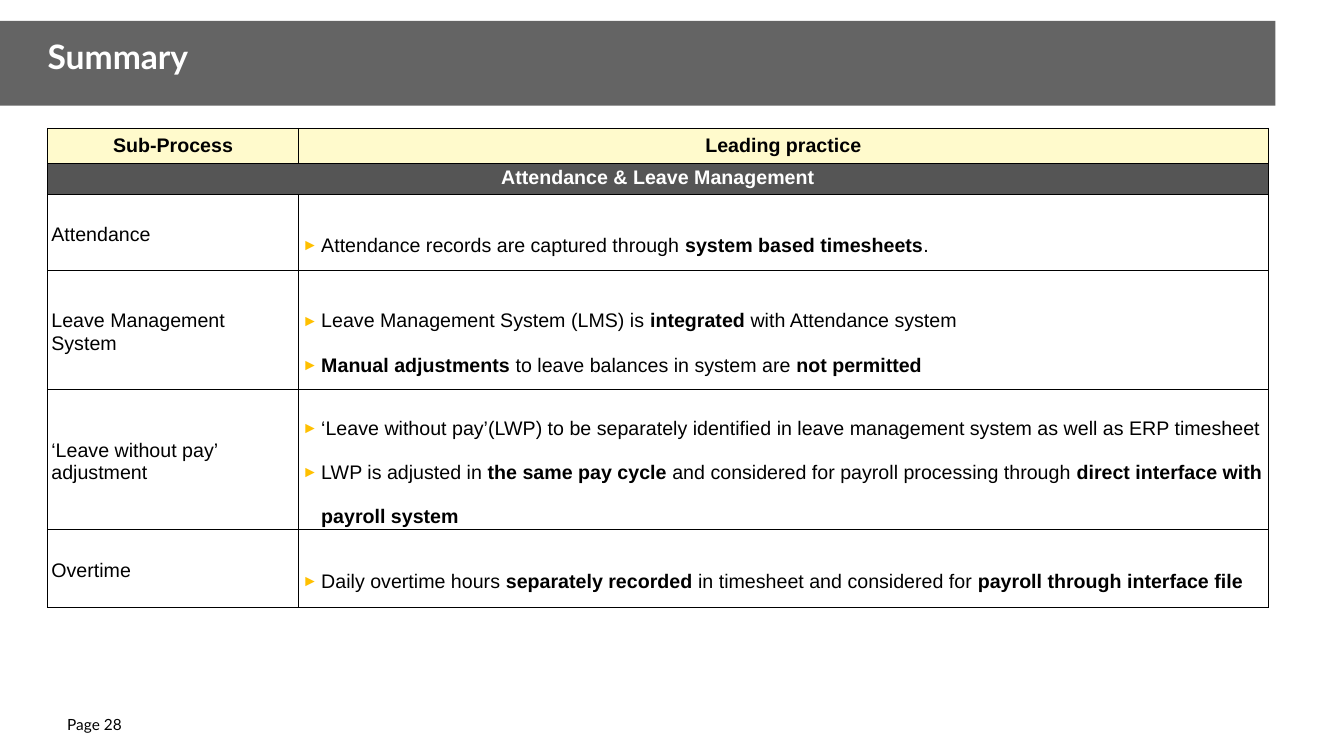
from lxml.etree import SubElement
from pptx import Presentation
from pptx.dml.color import RGBColor
from pptx.enum.shapes import MSO_SHAPE
from pptx.enum.text import MSO_ANCHOR, PP_ALIGN
from pptx.oxml.ns import qn
from pptx.util import Pt

COLUMN_WIDTHS = [179.3, 692.6]
ROW_HEIGHTS = [25, 22.3, 54.7, 85, 99.7, 56]
HEADINGS = ["Sub-Process", "Leading practice"]
SECTION = "Attendance & Leave Management"
PRACTICES = [
    ("Attendance",
     ["Attendance records are captured through **system based timesheets**."]),
    ("Leave Management System",
     ["Leave Management System (LMS) is **integrated **with Attendance system",
      "**Manual adjustments** to leave balances in system are **not permitted**"]),
    ("‘Leave without pay’ adjustment",
     ["‘Leave without pay’(LWP) to be separately identified in leave management "
      "system as well as ERP timesheet",
      "LWP is adjusted in **the same pay cycle **and considered for payroll "
      "processing through **direct interface with payroll system**"]),
    ("Overtime",
     ["Daily overtime hours **separately recorded **in timesheet and considered "
      "for **payroll through interface file**"]),
]


def rgb(code):
    return RGBColor.from_string(code)


def style(run, size, font, color="000000", bold=False):
    run.font.size = Pt(size)
    run.font.name = font
    run.font.bold = bold
    run.font.color.rgb = rgb(color)


def set_margins(target, side, top):
    target.margin_left = target.margin_right = Pt(side)
    target.margin_top = Pt(top)
    target.margin_bottom = 0


def place(shape, left, top, width, height):
    shape.left, shape.top = Pt(left), Pt(top)
    shape.width, shape.height = Pt(width), Pt(height)


def add_band(slide):
    band = slide.shapes.add_shape(MSO_SHAPE.RECTANGLE, 0, Pt(15), Pt(911), Pt(60.5))
    band.shadow.inherit = False
    band.fill.solid()
    band.fill.fore_color.rgb = rgb("646464")
    band.line.fill.background()
    slide.shapes._spTree.insert(2, band._element)


def format_title(title, text):
    place(title, 34, 30.2, 876, 60.5)
    frame = title.text_frame
    frame.text = text
    frame.word_wrap = True
    frame.vertical_anchor = MSO_ANCHOR.TOP
    set_margins(frame, 0, 0)
    heading = frame.paragraphs[0]
    heading.alignment = PP_ALIGN.LEFT
    heading.line_spacing = 0.85
    style(heading.runs[0], 24, "Lato", "FFFFFF", True)


def add_page_number(slide, text):
    footer = slide.shapes.add_textbox(Pt(48), Pt(511), Pt(76), Pt(16)).text_frame
    footer.text = text
    footer.word_wrap = True
    set_margins(footer, 0, 0)
    style(footer.paragraphs[0].runs[0], 11, "Lato")


def add_borders(cell):
    properties = cell._tc.get_or_add_tcPr()
    for side in ("a:lnL", "a:lnR", "a:lnT", "a:lnB"):
        border = SubElement(properties, qn(side), w=str(Pt(0.5)))
        SubElement(SubElement(border, qn("a:solidFill")), qn("a:srgbClr"), val="000000")


def add_bullet(paragraph):
    properties = paragraph._p.get_or_add_pPr()
    properties.set("marL", str(Pt(13.5)))
    properties.set("indent", str(-Pt(13.5)))
    paragraph.line_spacing = 2.0
    SubElement(SubElement(properties, qn("a:buClr")), qn("a:srgbClr"), val="FFC000")
    SubElement(properties, qn("a:buSzPct"), val="80000")
    SubElement(properties, qn("a:buFont"), typeface="Arial")
    SubElement(properties, qn("a:buChar"), char="►")


def fill_label(cell, text, color="000000", bold=False):
    cell.text_frame.text = text
    label = cell.text_frame.paragraphs[0]
    label.alignment = PP_ALIGN.CENTER if bold else PP_ALIGN.LEFT
    style(label.runs[0], 14, "Arial", color, bold)


def fill_bullets(cell, lines):
    frame = cell.text_frame
    for index, line in enumerate(lines):
        bullet = frame.add_paragraph() if index else frame.paragraphs[0]
        add_bullet(bullet)
        for part, words in enumerate(line.split("**")):
            if words:
                run = bullet.add_run()
                run.text = words
                style(run, 14, "Arial", bold=part % 2 == 1)


def paint(cell, color):
    cell.fill.solid()
    cell.fill.fore_color.rgb = rgb(color)


def add_practices(slide):
    table = slide.shapes.add_table(
        len(ROW_HEIGHTS), len(COLUMN_WIDTHS), Pt(34), Pt(91.5),
        Pt(sum(COLUMN_WIDTHS)), Pt(sum(ROW_HEIGHTS))).table
    table.first_row = table.horz_banding = False
    for column, width in zip(table.columns, COLUMN_WIDTHS):
        column.width = Pt(width)
    for row, height in zip(table.rows, ROW_HEIGHTS):
        row.height = Pt(height)
    for cell in table.iter_cells():
        add_borders(cell)
        cell.fill.background()
        cell.vertical_anchor = MSO_ANCHOR.MIDDLE
        set_margins(cell, 2.7, 2.7)

    for column, heading in enumerate(HEADINGS):
        cell = table.cell(0, column)
        set_margins(cell, 0.7, 0.7)
        paint(cell, "FFFACC")
        fill_label(cell, heading, bold=True)

    section = table.cell(1, 0)
    section.merge(table.cell(1, 1))
    section.vertical_anchor = MSO_ANCHOR.TOP
    paint(section, "555555")
    fill_label(section, SECTION, "FFFFFF", True)

    for row, (process, lines) in enumerate(PRACTICES, 2):
        fill_label(table.cell(row, 0), process)
        fill_bullets(table.cell(row, 1), lines)


def main():
    deck = Presentation()
    deck.slide_width, deck.slide_height = Pt(960), Pt(540)
    slide = deck.slides.add_slide(deck.slide_layouts[5])
    format_title(slide.shapes.title, "Summary")
    add_band(slide)
    add_practices(slide)
    add_page_number(slide, "Page 28")
    deck.save("out.pptx")


if __name__ == "__main__":
    main()
